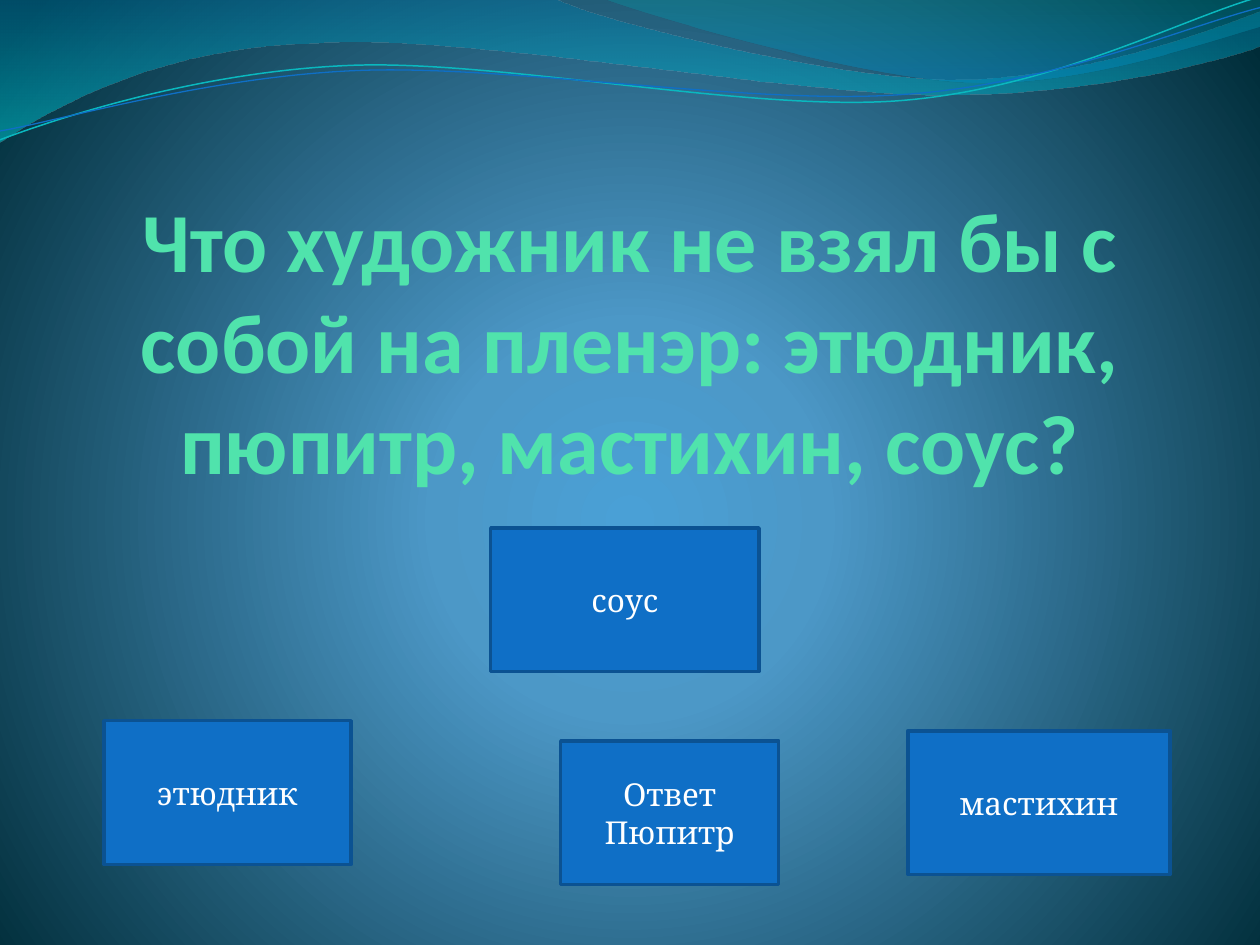
from math import cos, radians, sin

from lxml import etree
from pptx import Presentation
from pptx.dml.color import RGBColor
from pptx.enum.shapes import MSO_SHAPE
from pptx.enum.text import MSO_ANCHOR, PP_ALIGN
from pptx.oxml.ns import qn
from pptx.util import Inches, Pt

BUTTON = MSO_SHAPE.ACTION_BUTTON_CUSTOM
BOTTOM, MIDDLE = MSO_ANCHOR.BOTTOM, MSO_ANCHOR.MIDDLE
CENTER = PP_ALIGN.CENTER

WIDE, HIGH = Inches(10), Inches(7.5)
COLS, ROWS = 100, 75
TILT = -2.7

HUES = {
    "glow": "4AA0D6", "mid": "4C98C7", "deep": "002C38",
    "sea": "0074A1", "aqua": "00C6CF", "teal": "00A1A9", "sky": "008BBF",
    "cyan": "0AB8BF", "blue": "0F6FC6", "edge": "0B5292",
    "mint": "50E3AC", "white": "FFFFFF",
}

HEAD = (0, 0, 100, 12)
TITLE = (7.5, 24.1, 85, 14.9)
BOARD = (0, 41.9, 100, 28.3)

BANDS = [
    ((-.1, -.1, 100.2, 11.4),
     [[(0, 0)], [(44, -.1)],
      [(47.6, 1.7), (66.4, 6.3), (75.8, 6.3)],
      [(85.3, 6.3), (95.8, 2.6), (100, .9)],
      [(100.1, 3.6)],
      [(98.3, 4.4), (87, 7.6), (74.6, 7.5)],
      [(62.2, 7.5), (38.2, 2.8), (25.7, 3.4)],
      [(12.9, 3.6), (4.6, 8.3), (-.1, 11.3)],
      [(0, 0)]],
     [(0, "sea", 45), (100, "aqua", 55)]),
    ((47.9, -.1, 52.1, 7),
     [[(47.9, -.1)],
      [(50.9, 1.1), (68.2, 6.2), (76.9, 6.5)],
      [(85.6, 6.9), (96.1, 3.2), (100, 2.1)],
      [(100, 0)], [(47.9, -.1)]],
     [(0, "teal", 30), (80, "sky", 45), (100, "sky", 45)]),
]

LINES = [
    ((-.2, 2.2, 100.2, 7.1),
     [[(0, 11.1)],
      [(4.8, 9.3), (15.8, 5.7), (27.7, 5.2)],
      [(39.5, 4.7), (59.3, 8.9), (71.3, 8)],
      [(83.3, 7.1), (93.8, 1.5), (99.8, -.2)]], "cyan", .85),
    ((-.2, 3, 100.3, 5.8),
     [[(0, 10.4)],
      [(4.7, 9.6), (16.4, 6.1), (28.3, 5.6)],
      [(40.3, 5.1), (59.7, 8.4), (71.7, 7.5)],
      [(83.6, 6.7), (94.1, 2.1), (100, .6)]], "blue", .75),
]

CARDS = [
    (44.5, 16.9, 17.3, ["Ответ", "Пюпитр"]),
    (38.95, 0, 21.3, ["соус"]),
    (8.25, 15.3, 19.6, ["этюдник"]),
    (72.05, 16.1, 20.8, ["мастихин"]),
]
TALL = 11.4


def place(x, y):
    return round(WIDE * x / COLS), round(HIGH * y / ROWS)


def hue(name):
    return RGBColor.from_string(HUES[name])


def blend(fill, host, stops, angle=None):
    fill.solid()
    grad = etree.Element(qn("a:gradFill"), rotWithShape="1")
    marks = etree.SubElement(grad, qn("a:gsLst"))
    for pos, name, alpha in stops:
        mark = etree.SubElement(marks, qn("a:gs"), pos=str(pos * 1000))
        tint = etree.SubElement(mark, qn("a:srgbClr"), val=HUES[name])
        if alpha < 100:
            etree.SubElement(tint, qn("a:alpha"), val=str(alpha * 1000))
    if angle is None:
        way = etree.SubElement(grad, qn("a:path"), path="circle")
        sides = dict(l="10000", t="110000", r="10000", b="100000")
        etree.SubElement(way, qn("a:fillToRect"), **sides)
    else:
        etree.SubElement(grad, qn("a:lin"), ang=str(angle * 60000), scaled="1")
    host.replace(host.find(qn("a:solidFill")), grad)


def local(dot, box, tilt):
    left, top, wide, tall = box
    x, y = dot[0] - left - wide / 2, dot[1] - top - tall / 2
    c, s = cos(radians(tilt)), sin(radians(tilt))
    return place(x * c + y * s + wide / 2, y * c - x * s + tall / 2)


def curve(shapes, area, box, parts, tilt=0, close=False):
    left, top, wide, tall = box
    left, top = left + area[0], top + area[1]
    pen = shapes.build_freeform(*place(left, top))
    pen.add_line_segments([place(left + wide, top + tall)], close=False)
    shape = pen.convert_to_shape()
    shape.shadow.inherit = False
    shape.rotation = tilt
    way = shape.element.find(".//" + qn("a:path"))
    for child in list(way):
        way.remove(child)
    for i, part in enumerate(parts):
        kind = "cubicBezTo" if len(part) == 3 else "lnTo" if i else "moveTo"
        move = etree.SubElement(way, qn("a:" + kind))
        for dot in part:
            x, y = local(dot, box, tilt)
            etree.SubElement(move, qn("a:pt"), x=str(x), y=str(y))
    if close:
        etree.SubElement(way, qn("a:close"))
    return shape


def header(slide, area):
    for box, parts, stops in BANDS:
        band = curve(slide.shapes, area, box, parts, close=True)
        blend(band.fill, band.element.spPr, stops, 90)
        band.line.fill.background()
    group = slide.shapes.add_group_shape()
    for box, parts, name, width in LINES:
        wave = curve(group.shapes, area, box, parts, TILT)
        wave.fill.background()
        wave.line.color.rgb = hue(name)
        wave.line.width = Pt(width)


def write(frame, lines, anchor, look, tint):
    frame.word_wrap = True
    frame.vertical_anchor = anchor
    for i, text in enumerate(lines):
        para = frame.add_paragraph() if i else frame.paragraphs[0]
        para.alignment = CENTER
        run = para.add_run()
        run.text = text
        for key, value in look.items():
            setattr(run.font, key, value)
        run.font.color.rgb = hue(tint)


def title(slide, box):
    area = slide.shapes.add_textbox(*place(*box[:2]), *place(*box[2:]))
    frame = area.text_frame
    for side in ("left", "top", "right", "bottom"):
        setattr(frame, "margin_" + side, 0)
    text = "Что художник не взял бы с собой на пленэр: этюдник, пюпитр, мастихин, соус?"
    write(frame, [text], BOTTOM, dict(name="Calibri", size=Pt(48), bold=True), "mint")


def board(slide, box):
    for x, y, wide, lines in CARDS:
        spot = place(box[0] + x, box[1] + y)
        card = slide.shapes.add_shape(BUTTON, *spot, *place(wide, TALL))
        card.shadow.inherit = False
        card.fill.solid()
        card.fill.fore_color.rgb = hue("blue")
        card.line.color.rgb = hue("edge")
        card.line.width = Pt(2)
        write(card.text_frame, lines, MIDDLE, dict(name="Cambria", size=Pt(18)), "white")


def main():
    deck = Presentation()
    deck.slide_width, deck.slide_height = WIDE, HIGH
    slide = deck.slides.add_slide(deck.slide_layouts[6])
    fill = slide.background.fill
    fill.solid()
    host = slide.element.find(".//" + qn("p:bgPr"))
    blend(fill, host, [(0, "glow", 100), (25, "mid", 100), (100, "deep", 100)])
    header(slide, HEAD)
    title(slide, TITLE)
    board(slide, BOARD)
    deck.save("out.pptx")


if __name__ == "__main__":
    main()
